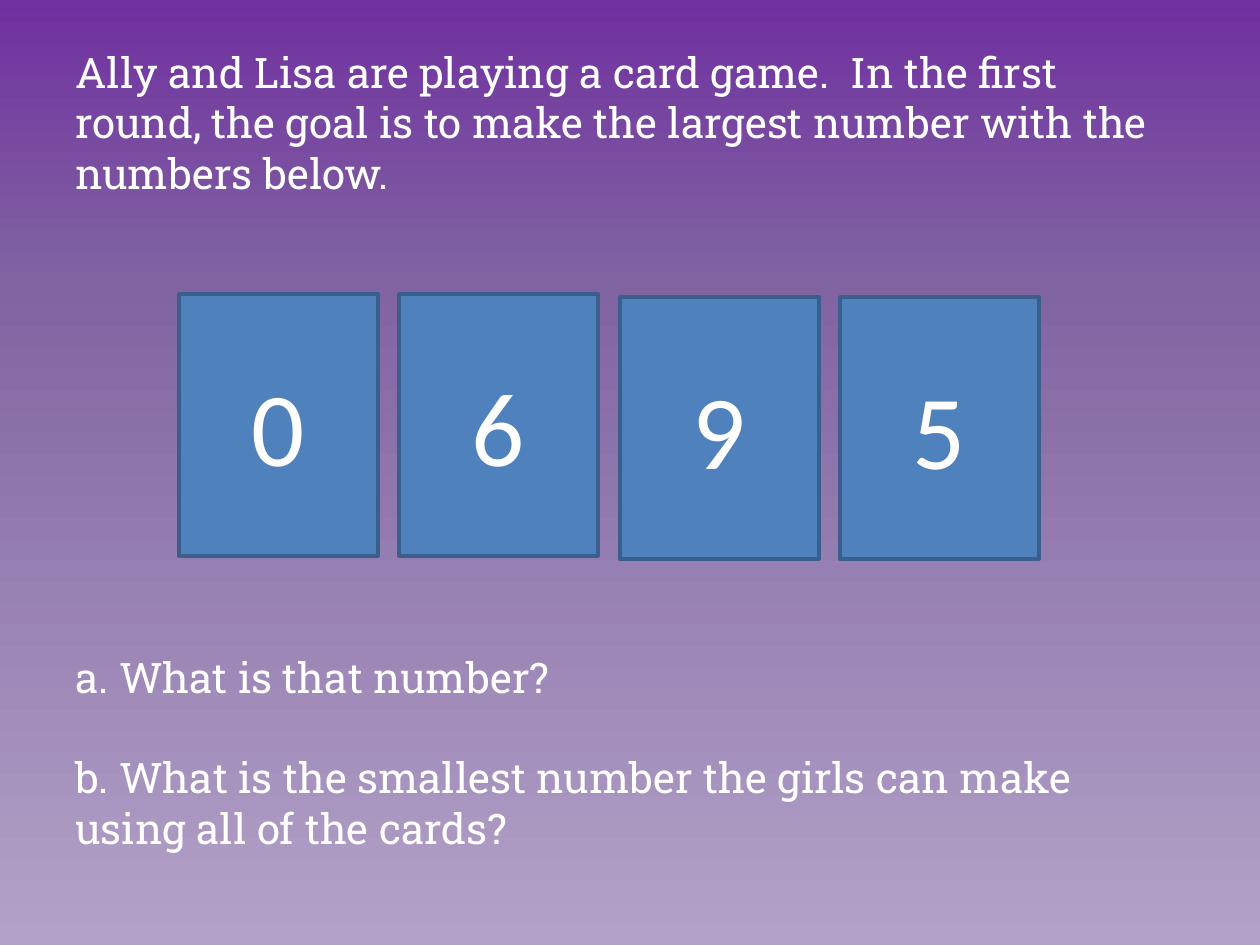
from copy import deepcopy

from pptx import Presentation
from pptx.dml.color import RGBColor
from pptx.enum.shapes import MSO_SHAPE
from pptx.enum.text import MSO_ANCHOR, PP_ALIGN
from pptx.oxml.ns import qn
from pptx.util import Emu, Pt

COLORS = {
    "top": "7030A0",
    "middle": "8064A2",
    "bottom": "B3A2C7",
    "card": "4F81BD",
    "edge": "3A5F8C",
    "text": "FFFFFF",
}
LINE_PITCH = 28.8


def px(*lengths):
    """Turn pixels, 126 to the inch, into EMU."""
    return [Emu(round(length * 914400 / 126)) for length in lengths]


def style_font(font, name, size):
    values = {"name": name, "size": Pt(size)}
    for attribute, value in values.items():
        setattr(font, attribute, value)
    font.color.rgb = RGBColor.from_string(COLORS["text"])


prs = Presentation()
prs.slide_width, prs.slide_height = px(1260, 945)
slide = prs.slides.add_slide(prs.slide_layouts[6])

# Background: three-stop gradient from top to bottom
backdrop = slide.background.fill
backdrop.gradient()
backdrop.gradient_angle = 270
stop_list = slide.element.find(".//" + qn("a:gsLst"))
stop_list.append(deepcopy(stop_list[0]))
fade = [("top", 0), ("middle", 0.3), ("bottom", 1)]
for stop, (color, position) in zip(backdrop.gradient_stops, fade):
    stop.color.rgb = RGBColor.from_string(COLORS[color])
    stop.position = position

# Problem text; the gap before each paragraph is counted in lines
problem = slide.shapes.add_textbox(*px(63, 38, 1134, 823)).text_frame
problem.word_wrap = True
problem.vertical_anchor = MSO_ANCHOR.MIDDLE
parts = [
    ("Ally and Lisa are playing a card game.  In the first round, "
     "the goal is to make the largest number with the numbers below.", 0),
    ("a. What is that number?", 9),
    ("b. What is the smallest number the girls can make "
     "using all of the cards?", 1),
]
for index, (wording, gap_lines) in enumerate(parts):
    part = problem.add_paragraph() if index else problem.paragraphs[0]
    part.text = wording
    part.line_spacing = Pt(LINE_PITCH)
    part.space_before = Pt(LINE_PITCH * gap_lines)
    style_font(part.runs[0].font, "Roboto Slab", 24)

# Number cards; the second pair sits slightly lower
for index, (digit, top) in enumerate([("0", 294), ("6", 294), ("9", 297), ("5", 297)]):
    left = 179 + 441 * index // 2
    card = slide.shapes.add_shape(MSO_SHAPE.RECTANGLE, *px(left, top, 199, 262))
    card.shadow.inherit = False
    card.fill.solid()
    card.fill.fore_color.rgb = RGBColor.from_string(COLORS["card"])
    card.line.color.rgb = RGBColor.from_string(COLORS["edge"])
    card.line.width = Pt(2)
    card.text_frame.vertical_anchor = MSO_ANCHOR.MIDDLE
    label = card.text_frame.paragraphs[0]
    label.text = digit
    label.alignment = PP_ALIGN.CENTER
    style_font(label.runs[0].font, "Calibri", 60)

prs.save("out.pptx")
